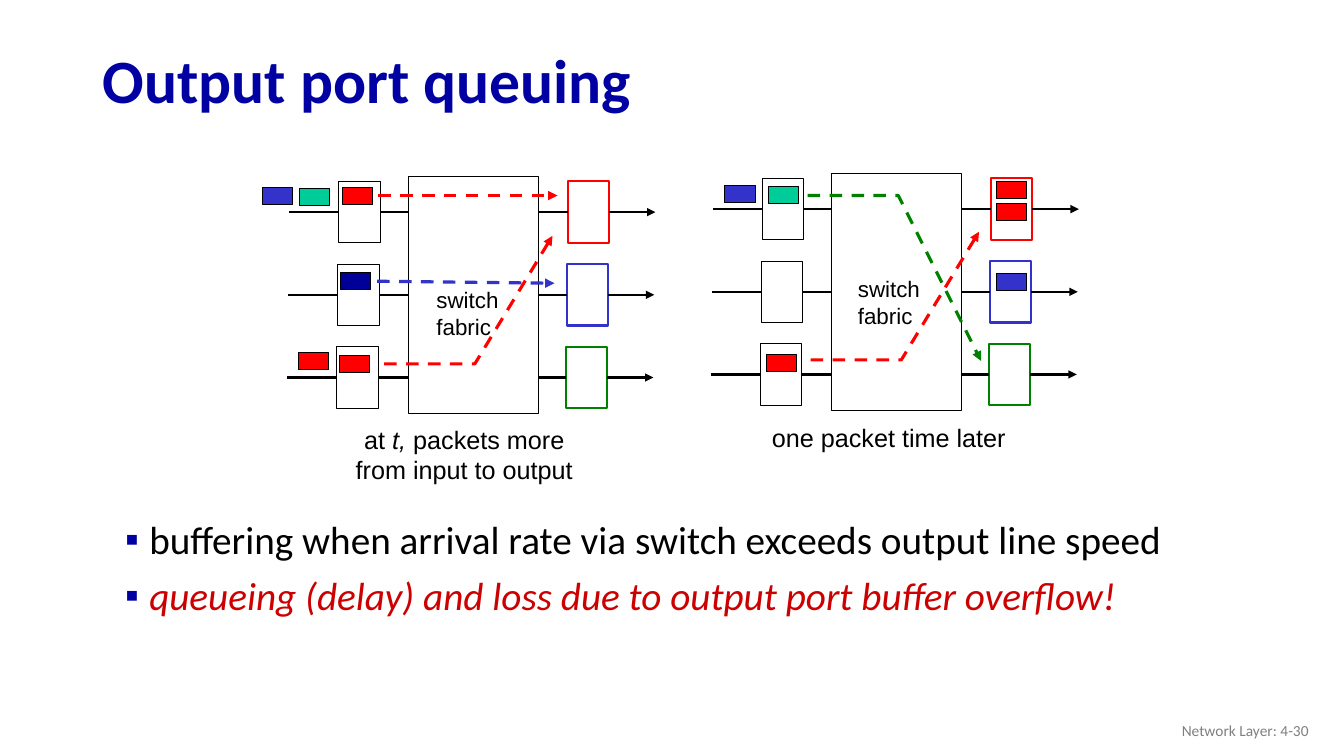
from lxml.etree import SubElement
from pptx import Presentation
from pptx.dml.color import RGBColor
from pptx.enum.dml import MSO_LINE
from pptx.enum.shapes import MSO_CONNECTOR, MSO_SHAPE
from pptx.enum.text import MSO_ANCHOR, MSO_AUTO_SIZE, PP_ALIGN
from pptx.oxml.ns import qn
from pptx.util import Inches, Pt

COLORS = {
    "title": "0000A3", "black": "000000", "white": "FFFFFF", "red": "FF0000",
    "blue": "3333CC", "navy": "000099", "green": "008000", "teal": "00CC99",
    "accent": "CC0000", "gray": "808080",
}
PORT_SIZE = (0.41, 0.61)
PACKET_SIZE = (0.3, 0.17)
FABRIC_SIZE = (1.29, 2.35)
ROW_PITCH = 0.82
FABRICS = [(4.05, 1.75), (8.25, 1.72)]
PACKETS = [
    (2.6, 1.86, "blue"), (2.97, 1.87, "teal"), (3.4, 1.86, "red"),
    (3.38, 2.7, "navy"), (2.96, 3.5, "red"), (3.37, 3.53, "red"),
    (7.19, 1.84, "blue"), (7.62, 1.85, "teal"), (7.6, 3.52, "red"),
    (9.88, 1.8, "red"), (9.88, 2.02, "red"), (9.88, 2.71, "blue"),
]
STRAIGHT_ROUTES = [
    ((3.75, 1.94), (5.53, 1.94), "red"),
    ((3.74, 2.79), (5.5, 2.81), "blue"),
]
BENT_ROUTES = [
    ([(3.81, 3.61), (4.71, 3.61), (5.48, 2.34)], "red"),
    ([(8.04, 3.57), (8.94, 3.57), (9.71, 2.3)], "red"),
    ([(8.01, 1.94), (8.91, 1.94), (9.73, 3.58)], "green"),
]


def rgb(name):
    """Return the named colour."""
    return RGBColor.from_string(COLORS[name])


def style_line(shape, color, width, dashed=False, arrow=False):
    """Set colour, width, dash and arrowhead of an outline."""
    line = shape.line
    line.color.rgb = rgb(color)
    line.width = Pt(width)
    if dashed:
        line.dash_style = MSO_LINE.DASH
    if arrow:
        outline = shape._element.spPr.find(qn("a:ln"))
        SubElement(outline, qn("a:tailEnd"), type="triangle")


def add_box(slide, left, top, size, fill="white", outline="black", width=0.75):
    """Draw a filled rectangle."""
    box = slide.shapes.add_shape(
        MSO_SHAPE.RECTANGLE, Inches(left), Inches(top), *map(Inches, size))
    box.shadow.inherit = False
    box.fill.solid()
    box.fill.fore_color.rgb = rgb(fill)
    style_line(box, outline, width)
    return box


def add_link(slide, start, end, color="black", width=1.5, dashed=False, arrow=False):
    """Draw a straight connector between two points."""
    link = slide.shapes.add_connector(
        MSO_CONNECTOR.STRAIGHT, *map(Inches, (*start, *end)))
    style_line(link, color, width, dashed, arrow)
    SubElement(link._element.spPr, qn("a:effectLst"))
    return link


def add_bent_route(slide, points, color):
    """Draw a dashed open path with an arrowhead."""
    corners = [(Inches(x), Inches(y)) for x, y in points]
    builder = slide.shapes.build_freeform(*corners[0])
    builder.add_line_segments(corners[1:], close=False)
    route = builder.convert_to_shape()
    route.shadow.inherit = False
    route.fill.background()
    style_line(route, color, 2.25, dashed=True, arrow=True)


def add_run(paragraph, text, size, font="Arial", color="black", bold=False, italic=False):
    """Add one formatted run to a paragraph."""
    run = paragraph.add_run()
    run.text = text
    run.font.name = font
    run.font.size = Pt(size)
    run.font.color.rgb = rgb(color)
    run.font.bold = bold
    run.font.italic = italic


def add_label(slide, area, lines, size, align=PP_ALIGN.LEFT, font="Arial",
              color="black", anchor=MSO_ANCHOR.TOP):
    """Add a text box; each line is a list of (text, italic) runs."""
    frame = slide.shapes.add_textbox(*map(Inches, area)).text_frame
    frame.word_wrap = True
    frame.vertical_anchor = anchor
    for index, runs in enumerate(lines):
        paragraph = frame.add_paragraph() if index else frame.paragraphs[0]
        paragraph.alignment = align
        for text, italic in runs:
            add_run(paragraph, text, size, font, color, italic=italic)


def place(shape, left, top, width, height):
    """Move and size a placeholder."""
    shape.left, shape.top = Inches(left), Inches(top)
    shape.width, shape.height = Inches(width), Inches(height)
    shape.text_frame.auto_size = MSO_AUTO_SIZE.NONE


def fill_title(slide, text):
    """Format the title placeholder."""
    title = slide.shapes.title
    place(title, 0.92, 0.34, 11.5, 0.98)
    title.text_frame.vertical_anchor = MSO_ANCHOR.MIDDLE
    paragraph = title.text_frame.paragraphs[0]
    paragraph.alignment = PP_ALIGN.LEFT
    paragraph.line_spacing = 0.9
    add_run(paragraph, text, 44, "Calibri", "title", bold=True)


def fill_bullets(slide, items):
    """Format the body placeholder as a bulleted list."""
    body = slide.placeholders[1]
    place(body, 0.99, 5.11, 11, 1.92)
    frame = body.text_frame
    for index, (text, color, italic) in enumerate(items):
        paragraph = frame.add_paragraph() if index else frame.paragraphs[0]
        paragraph.line_spacing = 0.9
        paragraph.space_before = Pt(10)
        properties = paragraph._p.get_or_add_pPr()
        properties.set("marL", str(Inches(0.39)))
        properties.set("indent", str(Inches(-0.24)))
        bullet_color = SubElement(properties, qn("a:buClr"))
        SubElement(bullet_color, qn("a:srgbClr"), val=COLORS["title"])
        SubElement(properties, qn("a:buFont"), typeface="Arial")
        SubElement(properties, qn("a:buChar"), char="▪")
        add_run(paragraph, text, 28, "Calibri", color, italic=italic)


def add_switch(slide, left, top):
    """Draw a switching fabric with three input and three output ports."""
    fabric = add_box(slide, left, top, FABRIC_SIZE)
    right = left + FABRIC_SIZE[0]
    for row, color in enumerate(("red", "blue", "green")):
        port_top = top + 0.05 + row * ROW_PITCH
        middle = port_top + PORT_SIZE[1] / 2
        input_left = left - 0.69 - 0.01 * row
        output_left = left + 1.58 - 0.01 * row
        input_right = input_left + PORT_SIZE[0]
        output_right = output_left + PORT_SIZE[0]
        input_port = add_box(slide, input_left, port_top, PORT_SIZE)
        output_port = add_box(slide, output_left, port_top, PORT_SIZE,
                              outline=color, width=1.5)
        arrival = add_link(slide, (input_left - 0.49, middle), (input_left, middle))
        arrival.end_connect(input_port, 1)
        entry = add_link(slide, (input_right, middle), (left, middle))
        entry.begin_connect(input_port, 3)
        outlet = add_link(slide, (right, middle), (output_left, middle))
        outlet.end_connect(output_port, 1)
        departure = add_link(slide, (output_right, middle),
                             (output_right + 0.46, middle), arrow=True)
        departure.begin_connect(output_port, 3)
        if row == 1:
            entry.end_connect(fabric, 1)
            outlet.begin_connect(fabric, 3)


def main():
    """Build the slide and save it."""
    presentation = Presentation()
    presentation.slide_width, presentation.slide_height = Inches(13.33), Inches(7.5)
    slide = presentation.slides.add_slide(presentation.slide_layouts[1])
    fill_title(slide, "Output port queuing")
    fill_bullets(slide, [
        ("buffering when arrival rate via switch exceeds output line speed", "black", False),
        ("queueing (delay) and loss due to output port buffer overflow!", "accent", True),
    ])
    for left, top in FABRICS:
        add_switch(slide, left, top)
    for left, top in ((4.23, 2.79), (8.41, 2.68)):
        add_label(slide, (left, top, 0.82, 0.64),
                  [[("switch", False)], [("fabric", False)]], 16)
    for left, top, color in PACKETS:
        add_box(slide, left, top, PACKET_SIZE, fill=color)
    for start, end, color in STRAIGHT_ROUTES:
        add_link(slide, start, end, color, 2.25, dashed=True, arrow=True)
    for points, color in BENT_ROUTES:
        add_bent_route(slide, points, color)
    add_label(slide, (3.26, 4.16, 2.69, 0.7),
              [[("at ", False), ("t,", True), (" packets more", False)],
               [("from input to output", False)]], 18, PP_ALIGN.CENTER)
    add_label(slide, (7.47, 4.14, 2.69, 0.4),
              [[("one packet time later", False)]], 18, PP_ALIGN.CENTER)
    add_label(slide, (10.08, 7.05, 3, 0.4), [[("Network Layer: 4-30", False)]], 11,
              PP_ALIGN.RIGHT, "Calibri", "gray", MSO_ANCHOR.MIDDLE)
    presentation.save("out.pptx")


if __name__ == "__main__":
    main()
